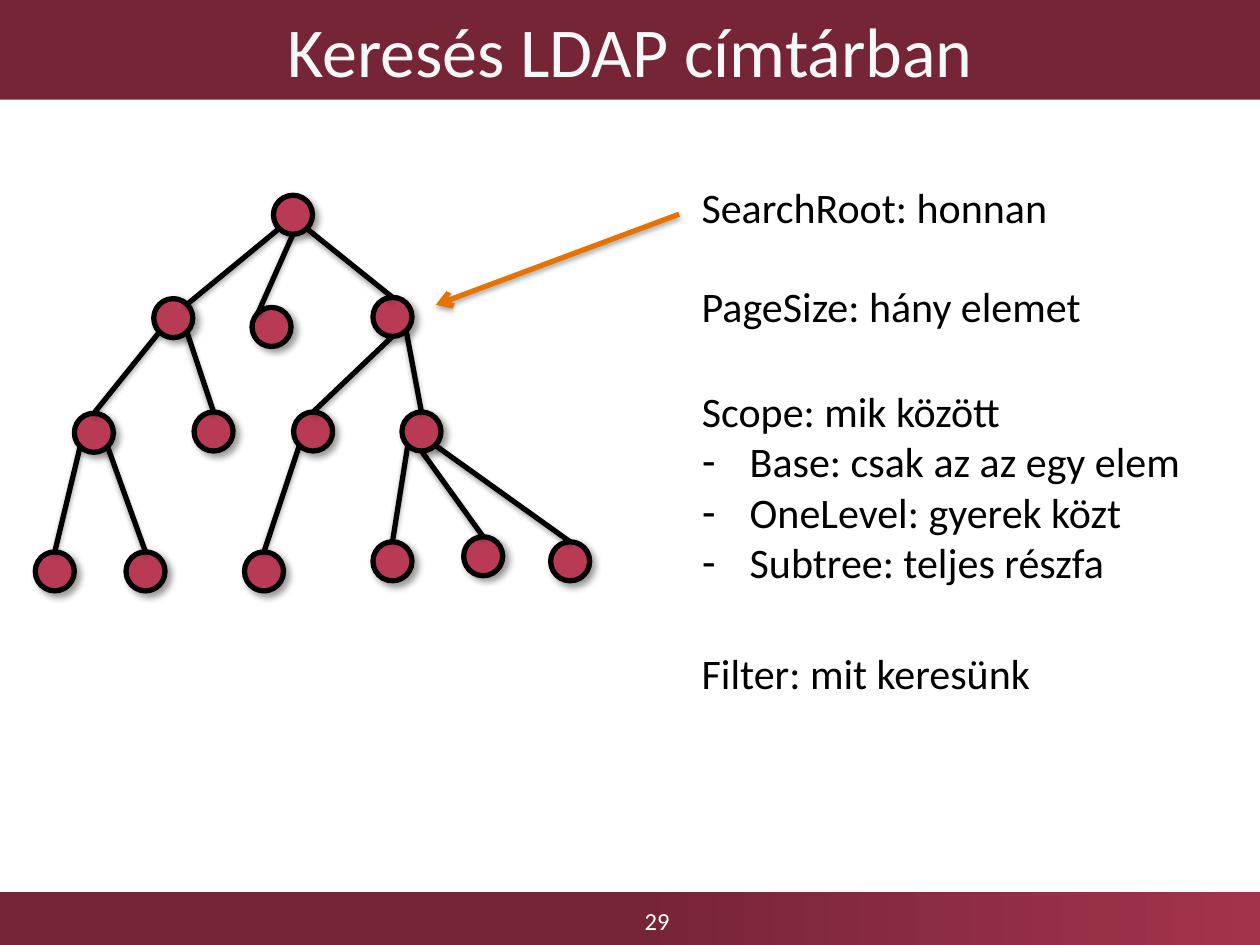
"""Build the slide on searching an LDAP directory tree."""
from dataclasses import dataclass
from typing import Optional

from lxml import etree
from pptx import Presentation
from pptx.dml.color import RGBColor
from pptx.enum.shapes import MSO_CONNECTOR, MSO_SHAPE
from pptx.enum.text import MSO_ANCHOR, MSO_AUTO_SIZE, PP_ALIGN
from pptx.oxml.ns import qn
from pptx.util import Inches, Pt

RECTANGLE, OVAL = MSO_SHAPE.RECTANGLE, MSO_SHAPE.OVAL
STRAIGHT = MSO_CONNECTOR.STRAIGHT
CENTER, LEFT = PP_ALIGN.CENTER, PP_ALIGN.LEFT
TOP, MIDDLE = MSO_ANCHOR.TOP, MSO_ANCHOR.MIDDLE
FIT_SHAPE, NO_FIT = MSO_AUTO_SIZE.SHAPE_TO_FIT_TEXT, MSO_AUTO_SIZE.NONE

FONT = "Calibri"
COLORS = {
    "band": "762536",
    "band_end": "A3334B",
    "title": "F8F8F8",
    "page": "FFFFFF",
    "node": "B83A55",
    "ink": "000000",
    "arrow": "E67300",
}
NODE_SIZE = 0.31
SITES = {
    "top": (0.5, 0), "top left": (0.15, 0.15), "top right": (0.85, 0.15),
    "bottom": (0.5, 1), "bottom left": (0.15, 0.85), "bottom right": (0.85, 0.85),
}


@dataclass
class Node:
    """A tree node and the sites its edge leaves the parent from and enters by."""
    left: float
    top: float
    parent: Optional[int] = None
    leaves: str = "bottom"
    enters: str = "top"

    def site(self, name: str) -> tuple[float, float]:
        """Return the point of a named connection site."""
        across, down = SITES[name]
        return self.left + across * NODE_SIZE, self.top + down * NODE_SIZE


@dataclass
class Shadow:
    """An outer shadow with opacity in percent, lengths in points, angle in degrees."""
    opacity: int
    blur: float
    distance: float
    angle: int


@dataclass
class Note:
    """A search setting and its box."""
    text: str
    top: float
    width: float


NODE_SHADOW = Shadow(40, 4, 3, 45)
LINE_SHADOW = Shadow(35, 3.1, 1.8, 90)
NODES = [
    Node(2.17, 1.55),
    Node(1.22, 2.37, 0, "bottom left", "top right"),
    Node(2.96, 2.36, 0, "bottom right"),
    Node(2, 2.44, 0, "bottom", "top left"),
    Node(0.59, 3.28, 1, "bottom left"),
    Node(1.54, 3.27, 1, "bottom right"),
    Node(2.33, 3.27, 2, "bottom"),
    Node(3.19, 3.27, 2, "bottom right"),
    Node(0.28, 4.38, 4, "bottom left"),
    Node(1, 4.38, 4, "bottom right"),
    Node(1.94, 4.38, 6, "bottom left"),
    Node(2.96, 4.3, 7, "bottom left"),
    Node(3.68, 4.26, 7, "bottom"),
    Node(4.37, 4.3, 7, "bottom right"),
]
NOTES_LEFT = 5.47
NOTES = [
    Note("SearchRoot: honnan", 1.39, 3.54),
    Note("PageSize: hány elemet", 2.18, 3.78),
    Note("Filter: mit keresünk", 5.09, 3.78),
]
SCOPES = ["Base: csak az az egy elem", "OneLevel: gyerek közt", "Subtree: teljes részfa"]


def color(name: str) -> RGBColor:
    """Look up a palette colour."""
    return RGBColor.from_string(COLORS[name])


def place(shape, left: float, top: float, width: float, height: float) -> None:
    """Move and size a shape, in inches."""
    shape.left, shape.top = Inches(left), Inches(top)
    shape.width, shape.height = Inches(width), Inches(height)


def style(paragraph, size: int, ink: str, align=LEFT) -> None:
    """Format a whole paragraph."""
    paragraph.alignment = align
    paragraph.font.name = FONT
    paragraph.font.size = Pt(size)
    paragraph.font.color.rgb = color(ink)


def add_shadow(shape, shadow: Shadow) -> None:
    """Give a shape or connector an outer shadow."""
    effects = etree.SubElement(shape._element.spPr, qn("a:effectLst"))
    outer = etree.SubElement(
        effects, qn("a:outerShdw"), blurRad=str(Pt(shadow.blur)),
        dist=str(Pt(shadow.distance)), dir=str(shadow.angle * 60000), rotWithShape="0")
    tint = etree.SubElement(outer, qn("a:srgbClr"), val=COLORS["ink"])
    etree.SubElement(tint, qn("a:alpha"), val=str(shadow.opacity * 1000))


def add_line(slide, start: tuple[float, float], end: tuple[float, float],
             ink: str = "ink", arrow: bool = False) -> None:
    """Draw a shadowed line, with an arrowhead at its end if asked."""
    line = slide.shapes.add_connector(STRAIGHT, *map(Inches, start + end))
    line.line.color.rgb = color(ink)
    line.line.width = Pt(3)
    if arrow:
        etree.SubElement(line.line._get_or_add_ln(), qn("a:tailEnd"), type="arrow")
    add_shadow(line, LINE_SHADOW)


def add_node(slide, node: Node) -> None:
    """Draw one tree node."""
    circle = slide.shapes.add_shape(
        OVAL, *map(Inches, (node.left, node.top, NODE_SIZE, NODE_SIZE)))
    circle.fill.solid()
    circle.fill.fore_color.rgb = color("node")
    circle.line.color.rgb = color("ink")
    circle.line.width = Pt(3)
    add_shadow(circle, NODE_SHADOW)


def add_text(slide, text: str, box: tuple[float, float, float, float],
             size: int, ink: str, align=LEFT, anchor=TOP, fit=FIT_SHAPE) -> None:
    """Add a one-paragraph text box."""
    frame = slide.shapes.add_textbox(*map(Inches, box)).text_frame
    frame.word_wrap = True
    frame.auto_size = fit
    frame.vertical_anchor = anchor
    frame.text = text
    style(frame.paragraphs[0], size, ink, align)


def add_footer(slide) -> None:
    """Draw the bottom band and the page number."""
    band = slide.shapes.add_shape(RECTANGLE, *map(Inches, (0, 7.08, 10, 0.42)))
    band.shadow.inherit = False
    band.line.fill.background()
    band.fill.gradient()
    band.fill.gradient_angle = 0
    for stop, position, name in zip(band.fill.gradient_stops, (0.5, 1), ("band", "band_end")):
        stop.position = position
        stop.color.rgb = color(name)
    add_text(slide, "29", (3.59, 7.11, 3.25, 0.39), 14, "page", CENTER, MIDDLE, NO_FIT)


def fill_title(title) -> None:
    """Write the title on its band."""
    place(title, 0, 0, 10, 0.79)
    title.fill.solid()
    title.fill.fore_color.rgb = color("band")
    title.text_frame.text = "Keresés LDAP címtárban"
    title.text_frame.vertical_anchor = MIDDLE
    style(title.text_frame.paragraphs[0], 40, "title", CENTER)


def fill_scopes(body) -> None:
    """Write the scope setting and its dashed list."""
    place(body, NOTES_LEFT, 3.01, 4.07, 1.72)
    frame = body.text_frame
    frame.text = "\n".join(["Scope: mik között", *SCOPES])
    frame.auto_size = NO_FIT
    for index, paragraph in enumerate(frame.paragraphs):
        indent = Inches(0.38) if index else 0
        properties = paragraph._p.get_or_add_pPr()
        properties.set("marL", str(indent))
        properties.set("indent", str(-indent))
        paragraph.space_before = Pt(0)
        if index:
            etree.SubElement(properties, qn("a:buChar"), char="-")
        else:
            etree.SubElement(properties, qn("a:buNone"))
        style(paragraph, 24, "ink")


def main() -> None:
    """Build and save the slide."""
    deck = Presentation()
    deck.slide_width, deck.slide_height = Inches(10), Inches(7.5)
    slide = deck.slides.add_slide(deck.slide_layouts[1])
    add_footer(slide)
    fill_title(slide.shapes.title)
    fill_scopes(slide.placeholders[1])
    for node in NODES:
        add_node(slide, node)
    for node in NODES[1:]:
        add_line(slide, NODES[node.parent].site(node.leaves), node.site(node.enters))
    add_line(slide, (5.39, 1.7), (3.46, 2.42), "arrow", arrow=True)
    for note in NOTES:
        add_text(slide, note.text, (NOTES_LEFT, note.top, note.width, 0.5), 24, "ink")
    deck.save("out.pptx")


if __name__ == "__main__":
    main()
